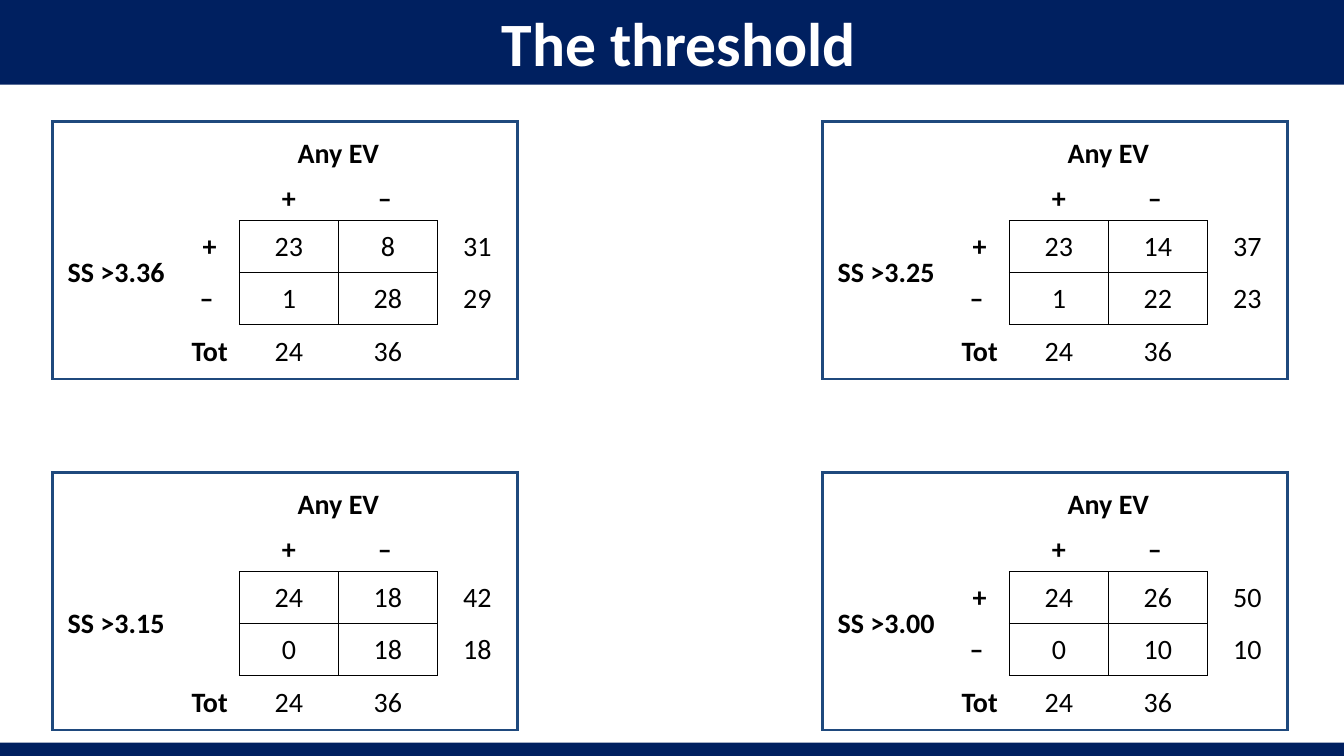
"""Builds a slide with four two-by-two threshold tables."""
import pptx
import pptx.dml.color
import pptx.enum.shapes
import pptx.enum.text
import pptx.oxml
import pptx.oxml.ns
import pptx.util

Pt = pptx.util.Pt

TITLE = "The threshold"
PANELS = [
    {"label": "SS >3.15", "counts": [[24, 18], [0, 18]], "signs": ("", ""), "place": (0, 1)},
    {"label": "SS >3.00", "counts": [[24, 26], [0, 10]], "signs": ("+", "–"), "place": (1, 1)},
    {"label": "SS >3.36", "counts": [[23, 8], [1, 28]], "signs": ("+", "–"), "place": (0, 0)},
    {"label": "SS >3.25", "counts": [[23, 14], [1, 22]], "signs": ("+", "–"), "place": (1, 0)},
]
COLORS = {"band": "002060", "frame": "1F497D", "text": "000000", "title": "FFFFFF"}
FONT = "Calibri"
SLIDE_WIDTH, SLIDE_HEIGHT = 960, 540
TITLE_HEIGHT, FOOTER_HEIGHT = 60.5, 9.5
PANEL_LEFTS, PANEL_TOPS = (37.5, 587.5), (87, 337.75)
COLUMN_WIDTHS = (91, 42.5, 70.75, 70.75, 57)
ROW_HEIGHTS = (39, 31.5, 37, 37, 39)
LAST = 4
MERGES = [((0, 0), (0, 1)), ((0, 2), (0, 3)), ((1, 0), (1, 1)), ((2, 0), (3, 0))]
SIDES = {"lnL": (0, -1), "lnR": (0, 1), "lnT": (-1, 0), "lnB": (1, 0)}
FRAME_LINE, GRID_LINE = ("frame", 2.25), ("text", 1)


def color(name):
    return pptx.dml.color.RGBColor.from_string(COLORS[name])


def in_grid(row, column):
    return row in (2, 3) and column in (2, 3)


def edge_line(row, column, step):
    next_row, next_column = row + step[0], column + step[1]
    if not (0 <= next_row <= LAST and 0 <= next_column <= LAST):
        return FRAME_LINE
    if in_grid(row, column) or in_grid(next_row, next_column):
        return GRID_LINE
    return None


def add_borders(cell, row, column):
    properties = cell._tc.get_or_add_tcPr()
    namespace = pptx.oxml.ns.nsdecls("a")
    for tag, step in SIDES.items():
        line = edge_line(row, column, step)
        if line:
            name, width = line
            xml = (f'<a:{tag} {namespace} w="{int(Pt(width))}"><a:solidFill>'
                   f'<a:srgbClr val="{COLORS[name]}"/></a:solidFill></a:{tag}>')
        else:
            xml = f'<a:{tag} {namespace} w="0"><a:noFill/></a:{tag}>'
        properties.append(pptx.oxml.parse_xml(xml))


def panel_rows(panel):
    (first, second), signs = panel["counts"], panel["signs"]
    return [
        ["", "", "Any EV", "", ""],
        ["", "", "+", "–", ""],
        [panel["label"], signs[0], *first, sum(first)],
        ["", signs[1], *second, sum(second)],
        ["", "Tot", *map(sum, zip(first, second)), ""],
    ]


def format_cell(cell, value):
    cell.vertical_anchor = pptx.enum.text.MSO_ANCHOR.MIDDLE
    if value == "–":
        cell.margin_right = Pt(11.7)
    cell.text = str(value)
    paragraph = cell.text_frame.paragraphs[0]
    paragraph.alignment = pptx.enum.text.PP_ALIGN.CENTER
    paragraph.font.name = FONT
    paragraph.font.size = Pt(20)
    paragraph.font.bold = isinstance(value, str)
    paragraph.font.color.rgb = color("text")


def add_panel(slide, panel):
    across, down = panel["place"]
    table = slide.shapes.add_table(
        len(ROW_HEIGHTS), len(COLUMN_WIDTHS), Pt(PANEL_LEFTS[across]), Pt(PANEL_TOPS[down]),
        Pt(sum(COLUMN_WIDTHS)), Pt(sum(ROW_HEIGHTS))).table
    table.first_row = table.horz_banding = False
    for column, width in zip(table.columns, COLUMN_WIDTHS):
        column.width = Pt(width)
    for row, height in zip(table.rows, ROW_HEIGHTS):
        row.height = Pt(height)
    for row_index, values in enumerate(panel_rows(panel)):
        for column_index, value in enumerate(values):
            cell = table.cell(row_index, column_index)
            format_cell(cell, value)
            add_borders(cell, row_index, column_index)
            cell.fill.background()
    for start, end in MERGES:
        table.cell(*start).merge(table.cell(*end))
    table.cell(0, 2).vertical_anchor = pptx.enum.text.MSO_ANCHOR.BOTTOM


def add_title(slide):
    title = slide.shapes.title
    title.left, title.top = Pt(0), Pt(0)
    title.width, title.height = Pt(SLIDE_WIDTH), Pt(TITLE_HEIGHT)
    title.fill.solid()
    title.fill.fore_color.rgb = color("band")
    frame = title.text_frame
    frame.text = TITLE
    frame.auto_size = pptx.enum.text.MSO_AUTO_SIZE.NONE
    frame.vertical_anchor = pptx.enum.text.MSO_ANCHOR.MIDDLE
    frame.margin_left = Pt(17)
    paragraph = frame.paragraphs[0]
    paragraph.alignment = pptx.enum.text.PP_ALIGN.CENTER
    paragraph.font.name = FONT
    paragraph.font.size = Pt(44)
    paragraph.font.bold = True
    paragraph.font.color.rgb = color("title")


def add_footer(slide):
    footer = slide.shapes.add_shape(
        pptx.enum.shapes.MSO_SHAPE.RECTANGLE, Pt(0), Pt(SLIDE_HEIGHT - FOOTER_HEIGHT),
        Pt(SLIDE_WIDTH), Pt(FOOTER_HEIGHT))
    footer.shadow.inherit = False
    footer.fill.solid()
    footer.fill.fore_color.rgb = color("band")
    footer.line.fill.background()


def main():
    presentation = pptx.Presentation()
    presentation.slide_width, presentation.slide_height = Pt(SLIDE_WIDTH), Pt(SLIDE_HEIGHT)
    slide = presentation.slides.add_slide(presentation.slide_layouts[5])
    add_title(slide)
    for panel in PANELS:
        add_panel(slide, panel)
    add_footer(slide)
    presentation.save("out.pptx")


if __name__ == "__main__":
    main()
